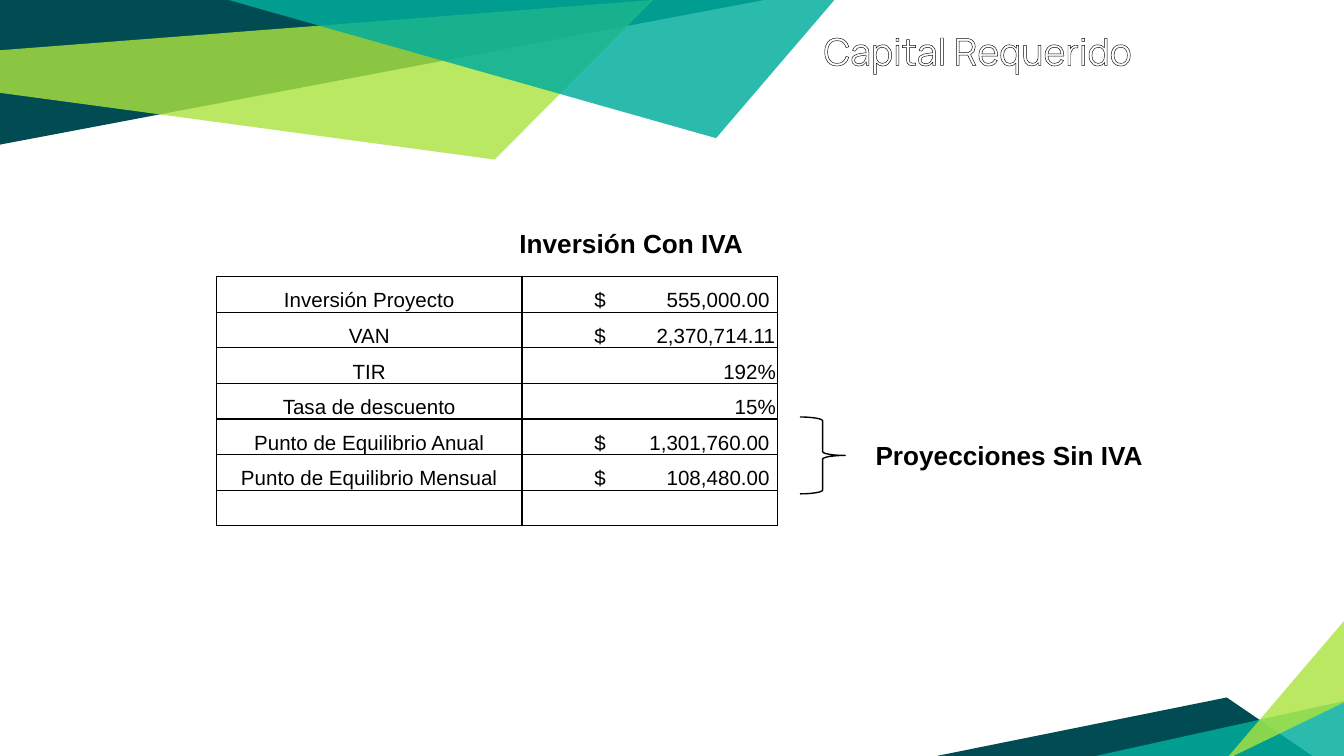
from lxml import etree
from pptx import Presentation
from pptx.dml.color import RGBColor
from pptx.enum.shapes import MSO_SHAPE
from pptx.enum.text import MSO_ANCHOR, MSO_AUTO_SIZE, PP_ALIGN
from pptx.oxml import parse_xml
from pptx.oxml.ns import nsdecls, qn
from pptx.util import Pt

RIGHT_BRACE = MSO_SHAPE.RIGHT_BRACE
MIDDLE, BOTTOM = MSO_ANCHOR.MIDDLE, MSO_ANCHOR.BOTTOM
GROW = MSO_AUTO_SIZE.SHAPE_TO_FIT_TEXT
LEFT, CENTER, RIGHT = PP_ALIGN.LEFT, PP_ALIGN.CENTER, PP_ALIGN.RIGHT

BLACK = RGBColor(0x00, 0x00, 0x00)
WHITE = RGBColor(0xFF, 0xFF, 0xFF)
OUTLINE = RGBColor(0x0D, 0x0D, 0x0D)
PETROL = RGBColor(0x00, 0x4C, 0x52)
TEAL = RGBColor(0x00, 0xAE, 0x9D)
LIME = RGBColor(0xAB, 0xE3, 0x3F)

# Colour, opacity in percent, corners in points
SHARDS = [
    (PETROL, 100, [(0, 0), (0, 77.5), (409.5, 0)]),
    (LIME, 81, [(-0.5, 27), (-0.5, 49.7), (265, 85.5), (350, 0)]),
    (PETROL, 100, [(502, 405), (703, 405), (657.2, 373.7)]),
    (TEAL, 83, [(721.5, 375.3), (721.5, 407), (578, 407)]),
    (LIME, 81, [(721.5, 375.6), (721.5, 331), (656.6, 407)]),
    (TEAL, 83, [(122.5, 0), (383.6, 74), (447, 0)]),
]

# Label, value, right edge of an amount that follows a dollar sign
FIGURES = [
    ("Inversión Proyecto", "\t$\t555,000.00", 132),
    ("VAN", "\t$\t2,370,714.11", 135),
    ("TIR", "192%", None),
    ("Tasa de descuento", "15%", None),
    ("Punto de Equilibrio Anual", "\t$\t1,301,760.00", 132),
    ("Punto de Equilibrio Mensual", "\t$\t108,480.00", 132),
    ("", "", None),
]
DOLLAR_TAB = 38


def add_shard(slide, color, opacity, corners):
    points = [(Pt(x), Pt(y)) for x, y in corners]
    builder = slide.shapes.build_freeform(*points[0])
    builder.add_line_segments(points[1:], close=True)
    shard = builder.convert_to_shape()
    shard.shadow.inherit = False
    shard.line.fill.background()
    shard.fill.solid()
    shard.fill.fore_color.rgb = color
    if opacity < 100:
        color_element = shard.fill._xPr.find(qn("a:solidFill"))[0]
        etree.SubElement(color_element, qn("a:alpha"), val=str(opacity * 1000))


def add_text(slide, box, text, size, font, color):
    shape = slide.shapes.add_textbox(*map(Pt, box))
    shape.text_frame.text = text
    shape.text_frame.word_wrap = True
    run = shape.text_frame.paragraphs[0].runs[0]
    run.font.size = Pt(size)
    run.font.name = font
    run.font.color.rgb = color
    return shape.text_frame, run


def add_title(slide, box):
    """Centred white title with outlined, shadowed letters."""
    text_frame, run = add_text(slide, box, "Capital Requerido", 20, "Manrope", WHITE)
    text_frame.vertical_anchor = MIDDLE
    text_frame.paragraphs[0].alignment = CENTER
    properties = run.font._element
    properties.insert(0, parse_xml(
        f'<a:ln {nsdecls("a")} w="{Pt(1.45)}"><a:solidFill>'
        f'<a:srgbClr val="{OUTLINE}"/></a:solidFill></a:ln>'))
    properties.find(qn("a:solidFill")).addnext(parse_xml(
        f'<a:effectLst {nsdecls("a")}><a:outerShdw blurRad="{Pt(4)}" dist="{Pt(3)}" '
        f'dir="5400000" algn="tl"><a:srgbClr val="{BLACK}"><a:alpha val="40000"/>'
        '</a:srgbClr></a:outerShdw></a:effectLst>'))


def add_heading(slide, box, text):
    text_frame, run = add_text(slide, box, text, 14, "Arial", BLACK)
    text_frame.auto_size = GROW
    run.font.bold = True


def set_borders(cell):
    properties = cell._tc.get_or_add_tcPr()
    for index, side in enumerate(("lnL", "lnR", "lnT", "lnB")):
        properties.insert(index, parse_xml(
            f'<a:{side} {nsdecls("a")} w="{Pt(0.75)}"><a:solidFill>'
            f'<a:srgbClr val="{BLACK}"/></a:solidFill></a:{side}>'))


def set_tabs(paragraph, amount_edge):
    tabs = etree.SubElement(paragraph._p.get_or_add_pPr(), qn("a:tabLst"))
    for position, alignment in ((DOLLAR_TAB, "l"), (amount_edge, "r")):
        etree.SubElement(tabs, qn("a:tab"), pos=str(Pt(position)), algn=alignment)


def fill_cell(cell, text, alignment, amount_edge=None):
    cell.fill.background()
    set_borders(cell)
    cell.margin_left = cell.margin_right = cell.margin_top = Pt(0.7)
    cell.margin_bottom = 0
    cell.vertical_anchor = BOTTOM
    paragraph = cell.text_frame.paragraphs[0]
    paragraph.text = text
    paragraph.alignment = alignment
    if amount_edge:
        set_tabs(paragraph, amount_edge)
    for run in paragraph.runs:
        run.font.size = Pt(11)
        run.font.name = "Arial"
        run.font.color.rgb = BLACK
    if not text:
        etree.SubElement(paragraph._p, qn("a:endParaRPr"), sz="1100")


def add_figures_table(slide, box):
    left, top, width, height = box
    row_count = len(FIGURES)
    table = slide.shapes.add_table(row_count, 2, *map(Pt, box)).table
    table.first_row = table.horz_banding = False
    label_width = 163.7
    table.columns[0].width = Pt(label_width)
    table.columns[1].width = Pt(width - label_width)
    for index, (label, value, amount_edge) in enumerate(FIGURES):
        table.rows[index].height = Pt(height / row_count)
        fill_cell(table.cell(index, 0), label, CENTER)
        alignment = LEFT if amount_edge else RIGHT
        fill_cell(table.cell(index, 1), value, alignment, amount_edge)


def add_brace(slide, box):
    brace = slide.shapes.add_shape(RIGHT_BRACE, *map(Pt, box))
    brace.shadow.inherit = False
    brace.fill.background()
    brace.line.color.rgb = BLACK
    brace.line.width = Pt(0.75)


def main():
    presentation = Presentation()
    presentation.slide_width = Pt(720)
    presentation.slide_height = Pt(405)
    slide = presentation.slides.add_slide(presentation.slide_layouts[6])
    for shard in SHARDS:
        add_shard(slide, *shard)
    add_title(slide, (381, 5.8, 285.8, 42.5))
    add_figures_table(slide, (116, 148.2, 300.4, 133.7))
    add_heading(slide, (462, 232, 184.3, 24.2), "Proyecciones Sin IVA")
    add_heading(slide, (271.2, 118.4, 159, 24.2), "Inversión Con IVA")
    add_brace(slide, (428.6, 223.4, 24.2, 41.2))
    presentation.save("out.pptx")


if __name__ == "__main__":
    main()
